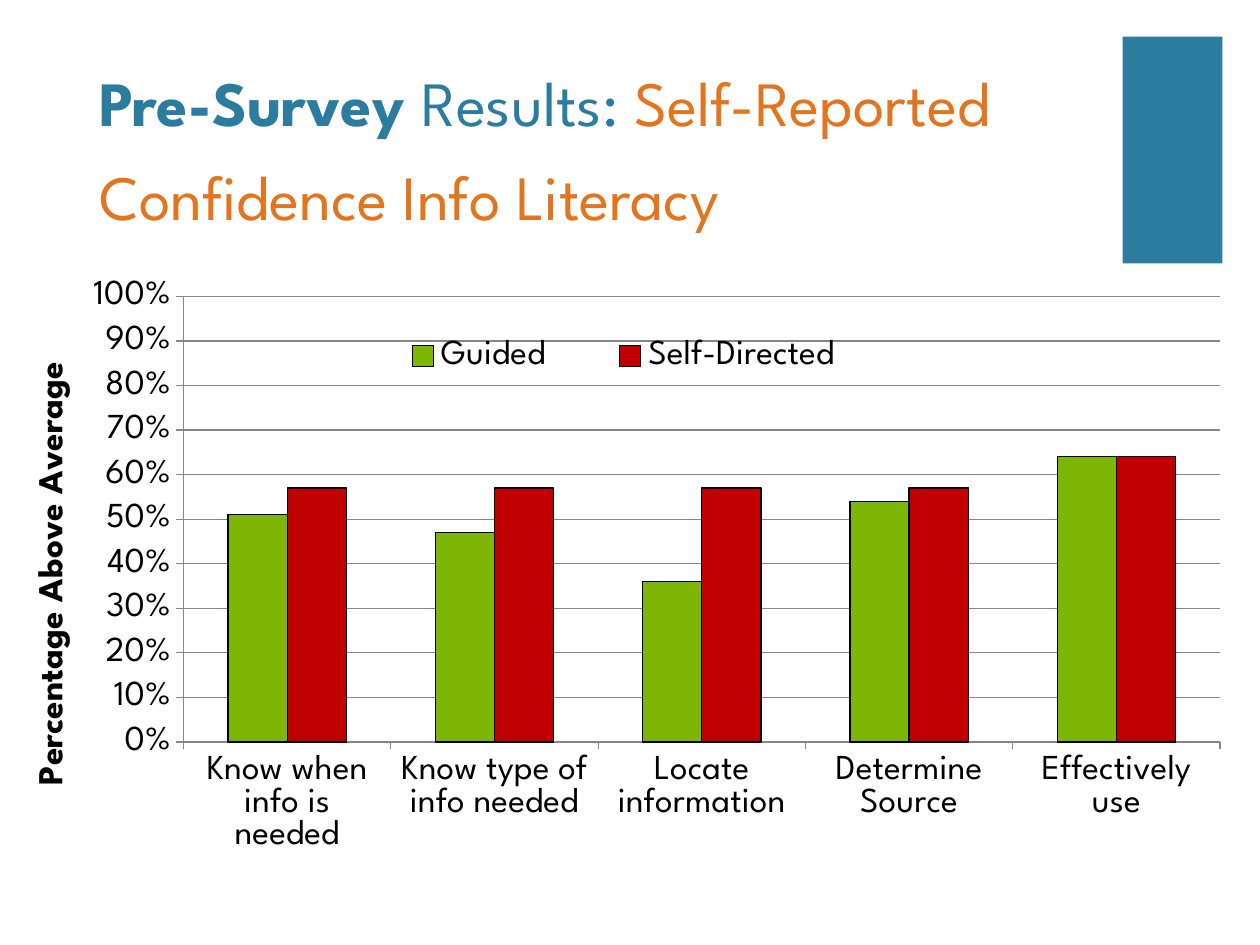
from lxml import etree
from pptx import Presentation
from pptx.chart.data import CategoryChartData
from pptx.dml.color import RGBColor
from pptx.enum.chart import XL_CHART_TYPE, XL_LEGEND_POSITION, XL_TICK_MARK
from pptx.enum.shapes import MSO_SHAPE
from pptx.enum.text import MSO_ANCHOR
from pptx.oxml.ns import qn
from pptx.util import Pt

CLUSTERED = XL_CHART_TYPE.COLUMN_CLUSTERED
LEGEND_RIGHT = XL_LEGEND_POSITION.RIGHT
TICK_OUT = XL_TICK_MARK.OUTSIDE
RECTANGLE = MSO_SHAPE.RECTANGLE
BOTTOM = MSO_ANCHOR.BOTTOM

FONT = "League Spartan"
COLORS = {
    "blue": "2C7C9F",
    "orange": "E2751D",
    "green": "7EB606",
    "red": "C00000",
    "black": "000000",
    "grey": "868686",
}
TITLE_SPANS = [
    ("Pre-Survey ", "blue", True),
    ("Results: ", "blue", False),
    ("Self-Reported Confidence Info Literacy", "orange", False),
]
CATEGORIES = [
    "Know when info is needed",
    "Know type of info needed",
    "Locate information",
    "Determine Source",
    "Effectively use",
]
SERIES = [
    ("Guided", "green", (0.51, 0.47, 0.36, 0.54, 0.64)),
    ("Self-Directed", "red", (0.57, 0.57, 0.57, 0.57, 0.64)),
]


def rgb(name):
    return RGBColor.from_string(COLORS[name])


def set_font(font, size, color="black", bold=False):
    font.name = FONT
    font.size = Pt(size)
    font.bold = bold
    font.color.rgb = rgb(color)


def set_line(line, color, width=0.75):
    line.color.rgb = rgb(color)
    line.width = Pt(width)


def set_layout(parent, after, **fractions):
    """Place a chart part by fractions of the chart, after the named child."""
    for old in parent.findall(qn("c:layout")):
        parent.remove(old)
    layout = etree.Element(qn("c:layout"))
    manual = etree.SubElement(layout, qn("c:manualLayout"))
    if after is None:
        etree.SubElement(manual, qn("c:layoutTarget")).set("val", "inner")
    for mode in ("xMode", "yMode"):
        etree.SubElement(manual, qn(f"c:{mode}")).set("val", "edge")
    for name, value in fractions.items():
        etree.SubElement(manual, qn(f"c:{name}")).set("val", str(value))
    if after is None:
        parent.insert(0, layout)
    else:
        parent.find(qn(after)).addnext(layout)


def add_accent(page, left, top, width, height):
    block = page.shapes.add_shape(
        RECTANGLE, Pt(left), Pt(top), Pt(width), Pt(height))
    block.shadow.inherit = False
    block.fill.solid()
    block.fill.fore_color.rgb = rgb("blue")
    block.line.fill.background()


def add_title(page, left, top, width, height):
    box = page.shapes.add_textbox(Pt(left), Pt(top), Pt(width), Pt(height))
    frame = box.text_frame
    frame.word_wrap = True
    frame.vertical_anchor = BOTTOM
    para = frame.paragraphs[0]
    para.line_spacing = 1.25
    for text, color, bold in TITLE_SPANS:
        span = para.add_run()
        span.text = text
        set_font(span.font, 36, color, bold)


def style_axis(axis):
    set_font(axis.tick_labels.font, 20)
    axis.major_tick_mark = TICK_OUT
    set_line(axis.format.line, "grey")


def add_survey_chart(page, left, top, width, height):
    data = CategoryChartData(number_format="0%")
    data.categories = CATEGORIES
    for name, _, values in SERIES:
        data.add_series(name, values)
    chart = page.shapes.add_chart(
        CLUSTERED, Pt(left), Pt(top), Pt(width), Pt(height), data).chart
    chart.has_title = False
    set_font(chart.font, 10)

    # Columns
    plot = chart.plots[0]
    plot.gap_width = 150
    plot.overlap = 0
    plot.vary_by_categories = False
    for series, (_, color, _) in zip(plot.series, SERIES):
        series.format.fill.solid()
        series.format.fill.fore_color.rgb = rgb(color)
        set_line(series.format.line, "black")
    plot_area = chart.element.find(".//" + qn("c:plotArea"))
    set_layout(plot_area, None, x=0.166, y=0.028, w=0.834, h=0.575)

    # Axes
    style_axis(chart.category_axis)
    values = chart.value_axis
    style_axis(values)
    values.minimum_scale = 0
    values.maximum_scale = 1
    values.major_unit = 0.1
    values.tick_labels.number_format = "0%"
    values.tick_labels.number_format_is_linked = False
    values.has_major_gridlines = True
    set_line(values.major_gridlines.format.line, "grey")
    para = values.axis_title.text_frame.paragraphs[0]
    para.text = "Percentage Above Average"
    set_font(para.font, 20, bold=True)
    set_layout(values.axis_title._element, "c:tx", x=0.04, y=0.104)

    # Legend
    chart.has_legend = True
    legend = chart.legend
    legend.position = LEGEND_RIGHT
    legend.include_in_layout = True
    set_font(legend.font, 20)
    set_layout(legend._element, "c:legendPos", x=0.3, y=0.07, w=0.44, h=0.07)


def main():
    deck = Presentation()
    deck.slide_width, deck.slide_height = Pt(720), Pt(540)
    page = deck.slides.add_slide(deck.slide_layouts[6])
    add_accent(page, 641.5, 21, 57, 129.5)
    add_title(page, 49.7, 46.8, 648, 90)
    add_survey_chart(page, -13, 157, 710.6, 442.8)
    deck.save("out.pptx")


if __name__ == "__main__":
    main()
